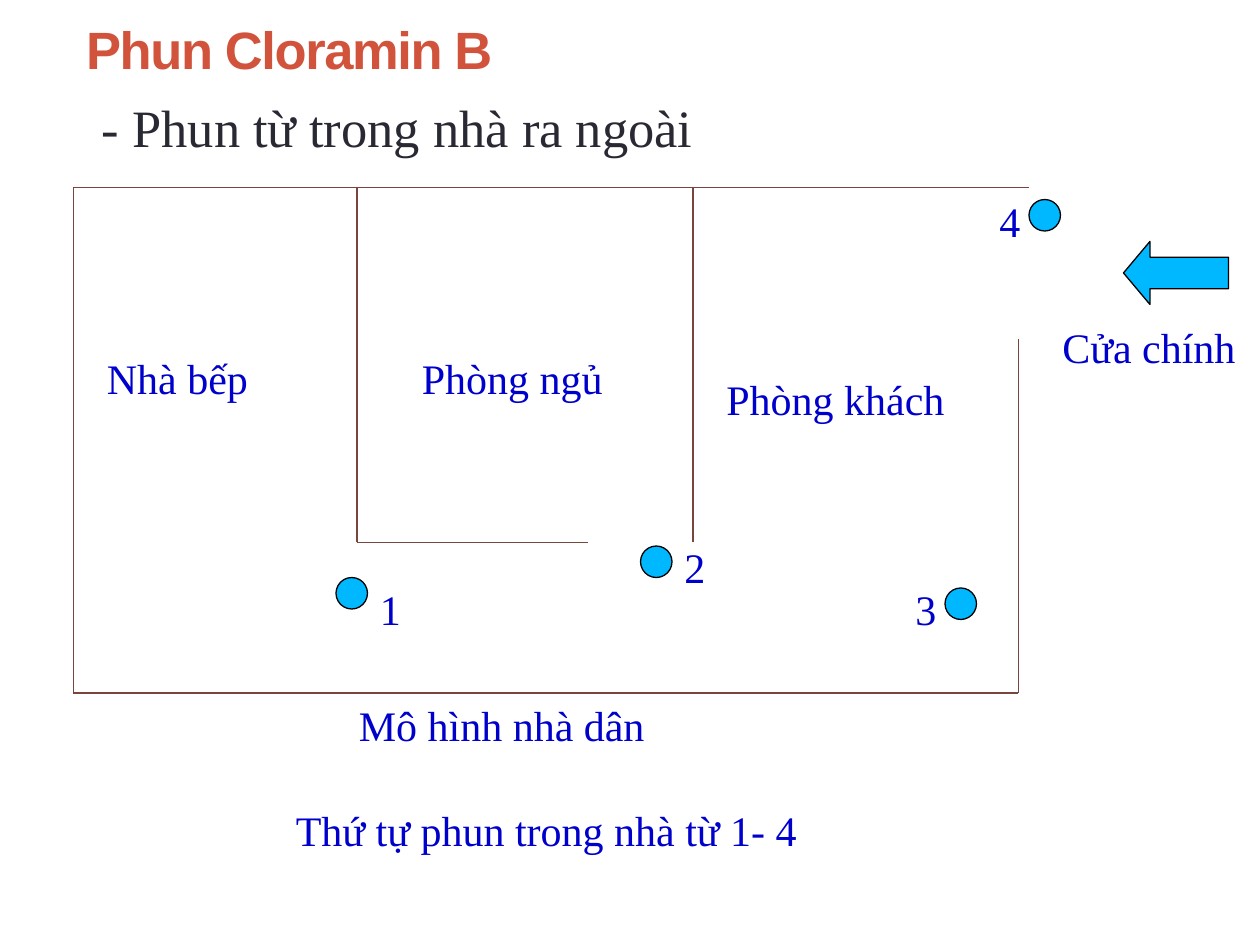
from lxml import etree
from pptx import Presentation
from pptx.dml.color import RGBColor
from pptx.enum import shapes, text
from pptx.oxml import ns
from pptx.util import Pt

RED = RGBColor(0xD2, 0x53, 0x3C)
DARK = RGBColor(0x29, 0x29, 0x34)
BLUE = RGBColor(0x00, 0x00, 0xCC)
SKY = RGBColor(0x00, 0xB8, 0xFF)
BROWN = RGBColor(0x79, 0x46, 0x3D)
BLACK = RGBColor(0, 0, 0)
SERIF = "Times New Roman"
SANS = "Arial"


def write(shape, words, color, **form):
    """Put one formatted line of text in a shape."""
    frame = shape.text_frame
    frame.word_wrap = True
    para = frame.paragraphs[0]
    para.alignment = text.PP_ALIGN.LEFT
    run = para.add_run()
    run.text = words
    for key, val in {"name": SERIF, "size": Pt(24), **form}.items():
        setattr(run.font, key, val)
    run.font.color.rgb = color
    return para


def place(shape, left, top, width, height):
    box = {"left": left, "top": top, "width": width, "height": height}
    for key, val in box.items():
        setattr(shape, key, Pt(val))


def label(slide, words, left, top, width):
    box = slide.shapes.add_textbox(Pt(left), Pt(top), Pt(width), Pt(36))
    write(box, words, BLUE).space_before = Pt(15)


def solid(slide, kind, left, top, width, height):
    shape = slide.shapes.add_shape(
        kind, Pt(left), Pt(top), Pt(width), Pt(height))
    shape.shadow.inherit = False
    shape.fill.solid()
    shape.fill.fore_color.rgb = SKY
    shape.line.color.rgb = BLACK
    shape.line.width = Pt(0.75)
    return shape


def wall(slide, x1, y1, x2, y2):
    line = slide.shapes.add_connector(
        shapes.MSO_CONNECTOR.STRAIGHT, Pt(x1), Pt(y1), Pt(x2), Pt(y2))
    line.line.color.rgb = BROWN
    line.line.width = Pt(0.75)
    etree.SubElement(line._element.spPr, ns.qn("a:effectLst"))


def head(slide, left, top, width):
    # Title
    title = slide.shapes.title
    place(title, left, top, width, 78)
    title.text_frame.vertical_anchor = text.MSO_ANCHOR.TOP
    para = write(title, "Phun Cloramin B", RED,
                 name=SANS, size=Pt(30), bold=True)
    para.runs[0].font._element.set("spc", "-80")

    # Lead line, without a bullet
    body = slide.placeholders[1]
    place(body, left + 9, top + 50, width, 33)
    body.text_frame.vertical_anchor = text.MSO_ANCHOR.MIDDLE
    para = write(body, "- Phun từ trong nhà ra ngoài", DARK, size=Pt(30))
    para.space_before = Pt(0)
    props = para._p.get_or_add_pPr()
    for key in ("marL", "indent"):
        props.set(key, "0")
    etree.SubElement(props, ns.qn("a:buNone"))


def house(slide, left, top, width, height):
    right, foot = left + width, top + height
    bed, hall, sill = left + 162, left + 354, top + 203

    # Outer walls, with the door gap at top right
    wall(slide, left, top, right + 6, top)
    wall(slide, left, top, left, foot)
    wall(slide, left, foot, right, foot)
    wall(slide, right, top + 86.5, right, foot)

    # Inner walls
    wall(slide, hall, top, hall, sill)
    wall(slide, bed, sill, left + 294, sill)
    wall(slide, bed, top, bed, sill)

    # Rooms
    for words, dx, dy, wide in (("Nhà bếp", 12, 91, 138),
                                ("Phòng ngủ", 192, 91, 138),
                                ("Phòng khách", 366, 103, 156)):
        label(slide, words, left + dx, top + dy, wide)


def stops(slide, left, top):
    # Spray points: dot place, then offset of its number
    spots = ((150, 223, 18, 0), (324, 205, 18, -6),
             (498, 229, -24, -6), (546, 7, -24, -6))
    for num, (dx, dy, nx, ny) in enumerate(spots, 1):
        x, y = left + dx, top + dy
        solid(slide, shapes.MSO_SHAPE.OVAL, x, y, 18, 18)
        label(slide, str(num), x + nx, y + ny, 24)


def door(slide, left, top, width):
    arrow = solid(slide, shapes.MSO_SHAPE.LEFT_ARROW, left + 42, top, 60, 36)
    arrow.adjustments[1] = 0.42
    label(slide, "Cửa chính", left, top + 42, width)


def notes(slide, left, top, width):
    label(slide, "Mô hình nhà dân", left + 36, top, width)
    label(slide, "Thứ tự phun trong nhà từ 1- 4", left, top + 60, width)


def main():
    deck = Presentation()
    deck.slide_width, deck.slide_height = Pt(720), Pt(540)
    slide = deck.slides.add_slide(deck.slide_layouts[1])
    head(slide, 42, 6, 648)
    house(slide, 42, 107, 540, 289)
    stops(slide, 42, 107)
    door(slide, 600, 138, 138)
    notes(slide, 162, 396, 330)
    deck.save("out.pptx")


if __name__ == "__main__":
    main()
